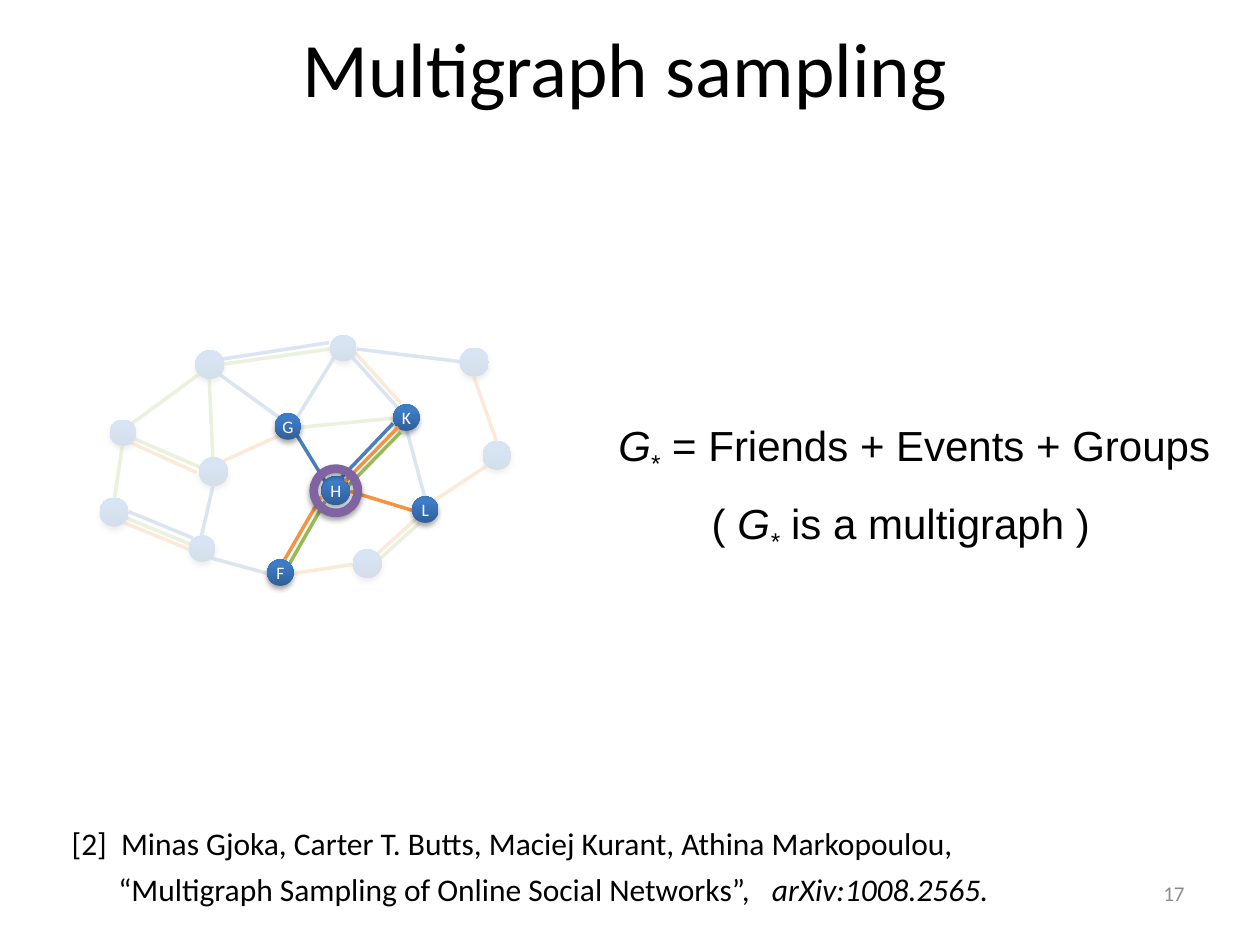
import copy
from dataclasses import dataclass

import pptx
import pptx.dml.color
import pptx.enum.shapes
import pptx.enum.text
import pptx.oxml
import pptx.oxml.ns
import pptx.util
from pptx.util import Inches

COLORS = {
    "friends": "4B7EBC",
    "events": "F69240",
    "groups": "98B955",
    "ring": "8064A2",
    "node_dark": "2F5F99",
    "node_mid": "3D7CC7",
    "node_light": "3A7CCB",
    "white": "FFFFFF",
    "black": "000000",
    "gray": "8C8C8C",
}
NODE_STOPS = ((0, "node_dark"), (0.8, "node_mid"), (1, "node_light"))
ALIGN = pptx.enum.text.PP_ALIGN
ANCHOR = pptx.enum.text.MSO_ANCHOR
SHAPE = pptx.enum.shapes.MSO_SHAPE
qn = pptx.oxml.ns.qn


@dataclass
class Node:
    left: float
    top: float
    size: float = 0.21
    letter: str = ""


@dataclass
class Edge:
    kind: str
    x1: float
    y1: float
    x2: float
    y2: float


@dataclass
class Span:
    text: str
    italic: bool = False
    baseline: int = 0


@dataclass
class Style:
    size: float
    font: str = "Calibri"
    color: str = "black"
    align: ALIGN = ALIGN.LEFT
    anchor: ANCHOR = ANCHOR.TOP


FADED_EDGES = [
    Edge("friends", 3.37, 3.94, 3.23, 3.42),
    Edge("events", 3.76, 2.99, 3.94, 3.5),
    Edge("friends", 2.83, 2.77, 3.65, 2.87),
    Edge("events", 3.86, 3.7, 3.45, 3.97),
    Edge("events", 3.3, 4.12, 2.99, 4.4),
    Edge("friends", 1.69, 3.86, 1.6, 4.25),
    Edge("events", 1.03, 3.51, 1.56, 3.75),
    Edge("groups", 0.97, 3.54, 0.91, 3.95),
    Edge("events", 0.99, 4.15, 1.5, 4.36),
    Edge("friends", 1.68, 4.43, 2.12, 4.55),
    Edge("events", 2.33, 4.55, 2.8, 4.48),
    Edge("groups", 1.77, 2.89, 2.62, 2.77),
    Edge("groups", 1.05, 3.36, 1.58, 2.97),
    Edge("groups", 1.66, 3.01, 1.69, 3.63),
    Edge("friends", 2.8, 2.84, 3.16, 3.24),
    Edge("friends", 2.36, 3.31, 2.65, 2.84),
    Edge("events", 1.77, 3.66, 2.21, 3.46),
    Edge("friends", 1.74, 2.97, 2.21, 3.31),
    Edge("groups", 2.39, 3.39, 3.12, 3.32),
    Edge("friends", 1.76, 2.85, 2.61, 2.72),
    Edge("groups", 1, 4.11, 1.51, 4.32),
    Edge("friends", 1.02, 4.06, 1.53, 4.27),
    Edge("events", 2.82, 2.8, 3.18, 3.2),
    Edge("groups", 1.06, 3.48, 1.59, 3.71),
    Edge("groups", 3.33, 4.15, 3.02, 4.43),
]
FADED_NODES = [
    Node(2.8, 4.36, 0.23),
    Node(1.5, 4.25),
    Node(0.87, 3.33),
    Node(3.83, 3.5, 0.23),
    Node(3.65, 2.76, 0.23),
    Node(0.79, 3.95, 0.23),
    Node(1.58, 3.63, 0.23),
    Node(2.62, 2.66),
    Node(1.55, 2.78, 0.23),
]
BACK_EDGES = [
    Edge("friends", 2.36, 3.46, 2.58, 3.82),
    Edge("groups", 2.58, 3.98, 2.3, 4.47),
    Edge("events", 2.78, 3.9, 3.27, 4.05),
]
ACTIVE_NODES = [
    Node(2.12, 4.44, letter="F"),
    Node(3.27, 3.94, letter="L"),
    Node(2.55, 3.78, 0.23, "H"),
    Node(2.18, 3.28, letter="G"),
    Node(3.12, 3.21, letter="K"),
]
FRONT_EDGES = [
    Edge("events", 2.55, 3.94, 2.26, 4.44),
    Edge("events", 3.16, 3.39, 2.74, 3.82),
    Edge("friends", 3.12, 3.36, 2.71, 3.79),
    Edge("groups", 3.18, 3.43, 2.77, 3.85),
]


def rgb(name: str) -> pptx.dml.color.RGBColor:
    return pptx.dml.color.RGBColor.from_string(COLORS[name])


def add_child(parent, tag: str, **attributes):
    element = parent.makeelement(qn(tag), {key: str(value) for key, value in attributes.items()})
    parent.append(element)
    return element


def add_edge(page, edge: Edge) -> None:
    line = page.shapes.add_connector(
        pptx.enum.shapes.MSO_CONNECTOR.STRAIGHT,
        Inches(edge.x1), Inches(edge.y1), Inches(edge.x2), Inches(edge.y2))
    line.line.color.rgb = rgb(edge.kind)
    line.line.width = pptx.util.Pt(2)
    add_child(line._element.spPr, "a:effectLst")


def add_shape(page, kind, left: float, top: float, width: float, height: float):
    shape = page.shapes.add_shape(kind, Inches(left), Inches(top), Inches(width), Inches(height))
    shape.shadow.inherit = False
    shape.fill.background()
    shape.line.fill.background()
    return shape


def add_shadow(shape) -> None:
    effects = shape._element.spPr.find(qn("a:effectLst"))
    shadow = add_child(effects, "a:outerShdw", blurRad=pptx.util.Pt(3.1), dist=pptx.util.Pt(1.8),
                       dir=5400000, rotWithShape=0)
    add_child(add_child(shadow, "a:srgbClr", val=COLORS["black"]), "a:alpha", val=35000)


def style_span(run, style: Style) -> None:
    run.font.size = pptx.util.Pt(style.size)
    run.font.name = style.font
    run.font.color.rgb = rgb(style.color)


def add_node(page, node: Node) -> None:
    circle = add_shape(page, SHAPE.OVAL, node.left, node.top, node.size, node.size)
    circle.fill.gradient()
    circle.fill.gradient_angle = 90
    stops = circle._element.spPr.find(".//" + qn("a:gsLst"))
    stops.append(copy.deepcopy(stops[0]))
    for stop, (position, color) in zip(circle.fill.gradient_stops, NODE_STOPS):
        stop.position = position
        stop.color.rgb = rgb(color)
    add_shadow(circle)
    if node.letter:
        frame = circle.text_frame
        frame.margin_left = frame.margin_right = frame.margin_top = frame.margin_bottom = 0
        frame.word_wrap = False
        frame.vertical_anchor = ANCHOR.MIDDLE
        frame.text = node.letter
        frame.paragraphs[0].alignment = ALIGN.CENTER
        style_span(frame.paragraphs[0].runs[0], Style(10, color="white"))


def add_text(page, left: float, top: float, width: float, height: float,
             lines: list[list[Span]], style: Style) -> list:
    box = page.shapes.add_textbox(Inches(left), Inches(top), Inches(width), Inches(height))
    frame = box.text_frame
    frame.word_wrap = True
    frame.vertical_anchor = style.anchor
    for index, spans in enumerate(lines):
        para = frame.add_paragraph() if index else frame.paragraphs[0]
        para.alignment = style.align
        for span in spans:
            run = para.add_run()
            run.text = span.text
            style_span(run, style)
            run.font.italic = span.italic
            if span.baseline:
                run.font._element.set("baseline", str(span.baseline * 1000))
    return list(frame.paragraphs)


def set_spacing(para, before: int, margin: float = 0, indent: float = 0) -> None:
    properties = para._p.get_or_add_pPr()
    properties.set("marL", str(Inches(margin)))
    properties.set("indent", str(Inches(indent)))
    add_child(add_child(properties, "a:spcBef"), "a:spcPct", val=before * 1000)


def main() -> None:
    deck = pptx.Presentation()
    deck.slide_width, deck.slide_height = Inches(10), Inches(7.5)
    page = deck.slides.add_slide(deck.slide_layouts[6])

    for edge in FADED_EDGES:
        add_edge(page, edge)
    for node in FADED_NODES:
        add_node(page, node)

    formula = add_text(page, 4.81, 3.28, 5.03, 1.11, [
        [Span("G", True), Span("*", baseline=-25), Span(" = Friends + Events + Groups")],
        [Span("( "), Span("G", True), Span("*", True, -25), Span(" is a multigraph )")],
    ], Style(24, "Arial"))
    for para, margin in zip(formula, (0, 0.74)):
        set_spacing(para, 50, margin)

    veil = add_shape(page, SHAPE.RECTANGLE, 0.55, 2.61, 3.75, 2.15)
    veil.fill.solid()
    veil.fill.fore_color.rgb = rgb("white")
    add_child(veil._element.spPr.find(".//" + qn("a:srgbClr")), "a:alpha", val=80000)

    for edge in BACK_EDGES:
        add_edge(page, edge)
    for node in ACTIVE_NODES:
        add_node(page, node)
    for edge in FRONT_EDGES:
        add_edge(page, edge)

    add_text(page, 7.17, 6.83, 2.33, 0.52, [[Span("17")]],
             Style(12, color="gray", align=ALIGN.RIGHT, anchor=ANCHOR.MIDDLE))
    add_text(page, 0.46, 0, 9, 1.06, [[Span("Multigraph sampling")]],
             Style(44, align=ALIGN.CENTER, anchor=ANCHOR.MIDDLE))

    ring = add_shape(page, SHAPE.OVAL, 2.49, 3.72, 0.35, 0.35)
    ring.line.color.rgb = rgb("ring")
    ring.line.width = pptx.util.Pt(5)
    add_shadow(ring)

    reference = add_text(page, 0.47, 6.49, 8.38, 0.83, [
        [Span("[2]  Minas Gjoka, Carter T. Butts, Maciej Kurant, Athina Markopoulou,")],
        [Span("\t“Multigraph Sampling of Online Social Networks”,   "), Span("arXiv:1008.2565.", True)],
    ], Style(18))
    for para in reference:
        set_spacing(para, 20, 0.37, -0.37)
        para.space_after = pptx.util.Pt(1)

    deck.save("out.pptx")


if __name__ == "__main__":
    main()
